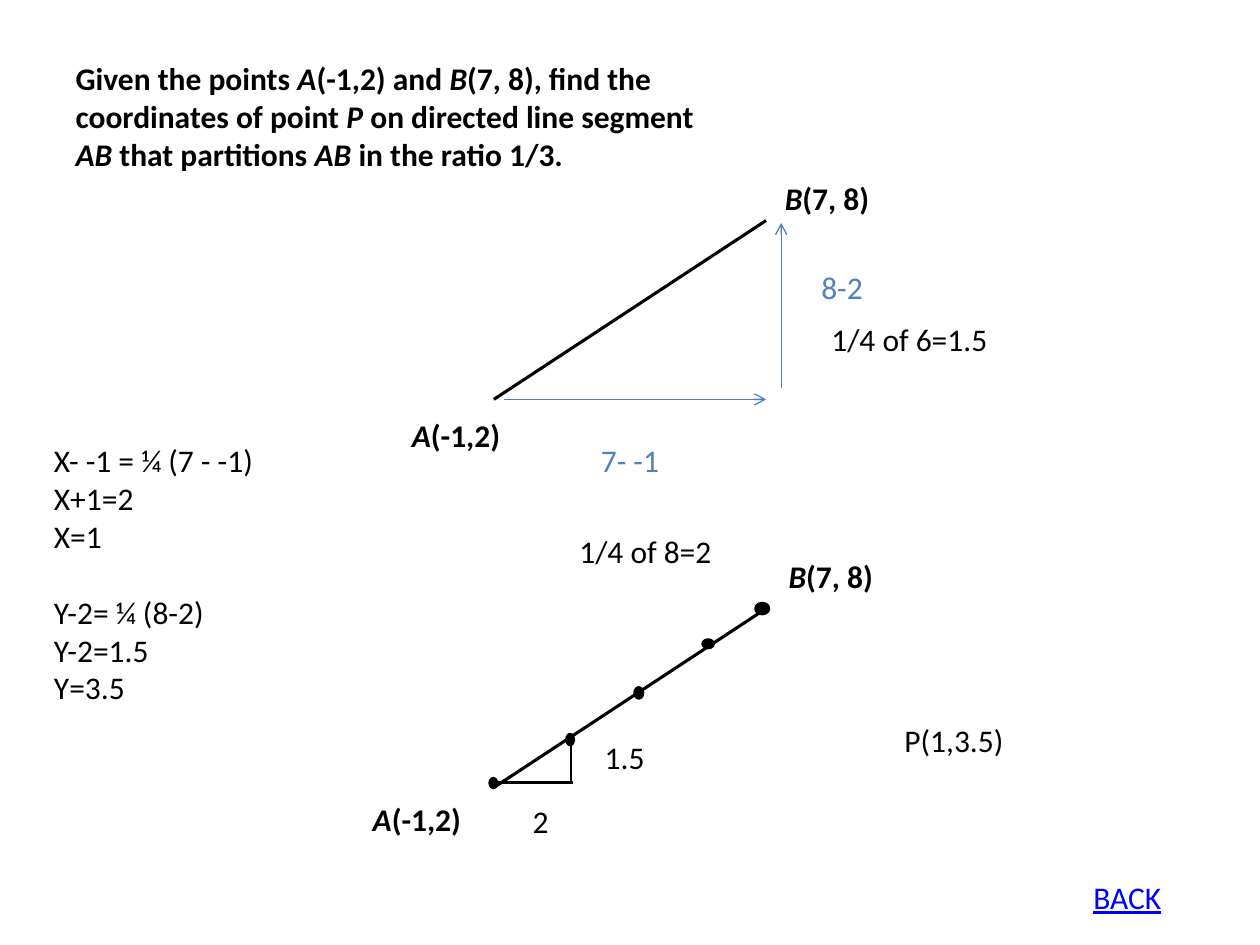
"""Build a slide that partitions the directed segment AB in the ratio 1/3."""
from dataclasses import dataclass

from lxml.etree import SubElement
from pptx import Presentation
from pptx.dml.color import RGBColor
from pptx.enum.shapes import MSO_CONNECTOR as Connector, MSO_SHAPE as Preset
from pptx.enum.text import MSO_ANCHOR as Anchor, MSO_AUTO_SIZE as AutoSize, PP_ALIGN as Align
from pptx.oxml.ns import qn
from pptx.slide import Slide
from pptx.text.text import TextFrame
from pptx.util import Emu, Pt

EMU_PER_PX = 9144


@dataclass(frozen=True)
class Theme:
    font: str = "Calibri"
    size: float = 18
    ink: str = "000000"
    arrow: str = "4B7EBC"
    delta: str = "4F81BD"
    link: str = "0000FF"
    segment: float = 1.75
    step: float = 1.25
    thin: float = 0.75
    dot: float = 2


THEME = Theme()


@dataclass(frozen=True)
class Box:
    left: int
    top: int
    width: int
    height: int = 40

    def emu(self) -> tuple[Emu, ...]:
        return tuple(px(n) for n in (self.left, self.top, self.width, self.height))


@dataclass(frozen=True)
class Label:
    text: str
    box: Box
    color: str = THEME.ink
    bold: bool = False
    underline: bool = False
    gap_before: int | None = None


@dataclass(frozen=True)
class Stroke:
    start: tuple[int, int]
    end: tuple[int, int]
    weight: float
    color: str = THEME.ink
    arrow: bool = False


PROBLEM = Label(
    "Given the points *A*(-1,2) and *B*(7, 8), find the\n"
    "coordinates of point *P *on directed line segment\n"
    "*AB *that partitions *AB *in the ratio 1/3.",
    Box(50, 42, 875, 101), bold=True)

SEGMENTS = (
    Stroke((392, 317), (608, 175), THEME.segment),
    Stroke((400, 317), (608, 317), THEME.thin, THEME.arrow, True),
    Stroke((620, 308), (620, 177), THEME.thin, THEME.arrow, True),
    Stroke((392, 625), (608, 483), THEME.segment),
    Stroke((453, 588), (453, 621), THEME.step),
    Stroke((394, 621), (455, 621), THEME.step),
)

DOTS = (
    Box(389, 618, 5, 7),
    Box(450, 583, 5, 8),
    Box(504, 546, 6, 8),
    Box(558, 508, 8, 6),
    Box(600, 479, 10, 8),
)

LABELS = (
    Label("*A*(-1,2)", Box(317, 325, 97), bold=True),
    Label("*B*(7, 8)", Box(613, 137, 88), bold=True),
    Label("7- -1", Box(467, 345, 125), THEME.delta),
    Label("8-2", Box(642, 208, 67), THEME.delta),
    Label("1/4 of 8=2", Box(450, 417, 126)),
    Label("1/4 of 6=1.5", Box(650, 249, 150)),
    Label("*A*(-1,2)", Box(286, 630, 97), bold=True),
    Label("*B*(7, 8)", Box(616, 437, 88), bold=True),
    Label("2", Box(413, 632, 33)),
    Label("1.5", Box(470, 581, 52)),
    Label("P(1,3.5)", Box(708, 567, 108)),
    Label("X- -1 = ¼ (7 - -1)\nX+1=2\nX=1\nY-2= ¼ (8-2)\nY-2=1.5\nY=3.5",
          Box(33, 345, 217, 222), gap_before=3),
    Label("BACK", Box(858, 692, 83), THEME.link, underline=True),
)


def px(length: int) -> Emu:
    return Emu(length * EMU_PER_PX)


def write(frame: TextFrame, label: Label) -> None:
    """Fill a frame with the label's lines, setting *starred* parts in italics."""
    frame.word_wrap = True
    frame.auto_size = AutoSize.NONE
    frame.vertical_anchor = Anchor.TOP
    for row, line in enumerate(label.text.split("\n")):
        paragraph = frame.add_paragraph() if row else frame.paragraphs[0]
        paragraph.alignment = Align.LEFT
        if row == label.gap_before:
            paragraph.space_before = Pt(22)
        font = paragraph.font
        font.name, font.size = THEME.font, Pt(THEME.size)
        font.bold, font.underline = label.bold, label.underline
        font.color.rgb = RGBColor.from_string(label.color)
        for part, words in enumerate(line.split("*")):
            if words:
                run = paragraph.add_run()
                run.text = words
                if part % 2:
                    run.font.italic = True


def draw_problem(slide: Slide, label: Label) -> None:
    title = slide.shapes.title
    title.left, title.top, title.width, title.height = label.box.emu()
    write(title.text_frame, label)


def draw_label(slide: Slide, label: Label) -> None:
    write(slide.shapes.add_textbox(*label.box.emu()).text_frame, label)


def draw_stroke(slide: Slide, stroke: Stroke) -> None:
    ends = (px(n) for n in stroke.start + stroke.end)
    connector = slide.shapes.add_connector(Connector.STRAIGHT, *ends)
    connector.line.width = Pt(stroke.weight)
    connector.line.color.rgb = RGBColor.from_string(stroke.color)
    properties = connector.element.spPr
    if stroke.arrow:
        SubElement(properties.find(qn("a:ln")), qn("a:tailEnd"), type="arrow")
    SubElement(properties, qn("a:effectLst"))


def draw_dot(slide: Slide, box: Box) -> None:
    dot = slide.shapes.add_shape(Preset.OVAL, *box.emu())
    dot.shadow.inherit = False
    dot.fill.solid()
    dot.fill.fore_color.rgb = RGBColor.from_string(THEME.ink)
    dot.line.color.rgb = RGBColor.from_string(THEME.ink)
    dot.line.width = Pt(THEME.dot)


def main() -> None:
    deck = Presentation()
    deck.slide_width, deck.slide_height = px(1000), px(750)
    slide = deck.slides.add_slide(deck.slide_layouts.get_by_name("Title Only"))
    draw_problem(slide, PROBLEM)
    for stroke in SEGMENTS:
        draw_stroke(slide, stroke)
    for dot in DOTS:
        draw_dot(slide, dot)
    for label in LABELS:
        draw_label(slide, label)
    deck.save("out.pptx")


if __name__ == "__main__":
    main()
